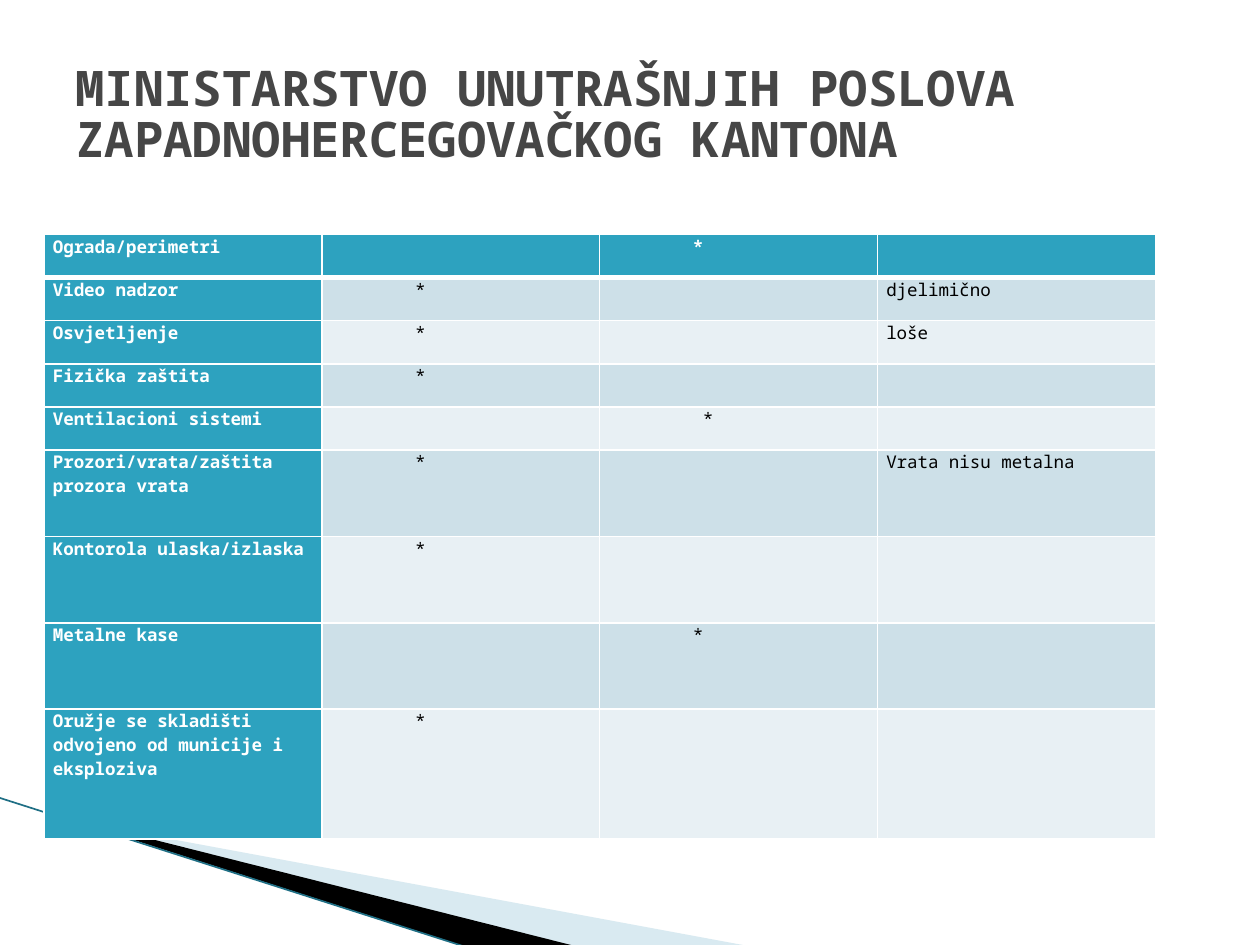
from lxml.etree import SubElement
from pptx import Presentation
from pptx.dml.color import RGBColor
from pptx.enum.text import MSO_ANCHOR, MSO_AUTO_SIZE, PP_ALIGN
from pptx.oxml.ns import qn
from pptx.util import Inches, Pt

FONT = "Noto Sans Mono"
TEAL, WHITE, BLACK = "2DA2BF", "FFFFFF", "000000"
BANDS = ["CDE0E8", "E8F0F4"]
YES, NO, NOTE = 1, 2, 3
ROW_UNITS = [1, 1, 1, 1, 1, 2, 2, 2, 3]
ROWS = [
    ("Ograda/perimetri", {NO: "*"}),
    ("Video nadzor", {YES: "*", NOTE: "djelimično"}),
    ("Osvjetljenje", {YES: "*", NOTE: "loše"}),
    ("Fizička zaštita", {YES: "*"}),
    ("Ventilacioni sistemi", {NO: "*"}),
    ("Prozori/vrata/zaštita prozora vrata", {YES: "*", NOTE: "Vrata nisu metalna"}),
    ("Kontorola ulaska/izlaska", {YES: "*"}),
    ("Metalne kase", {NO: "*"}),
    ("Oružje se skladišti odvojeno od municije i eksploziva", {YES: "*"}),
]
MARK_INDENT = 0.67
INDENTS = {"Ventilacioni sistemi": 0.75}


def rgb(value):
    return RGBColor.from_string(value)


def set_format(obj, values):
    for name, value in values.items():
        setattr(obj, name, value)


def write(p, text, size, color, bold):
    r = p.add_run()
    r.text = text
    set_format(r.font, {"name": FONT, "size": Pt(size), "bold": bold})
    r.font.color.rgb = rgb(color)


def add_wedge(s, left, top, points, color, alpha=None):
    corners = [(Inches(left + x), Inches(top + y)) for x, y in points]
    builder = s.shapes.build_freeform(*corners[0])
    builder.add_line_segments(corners[1:], close=True)
    sp = builder.convert_to_shape()
    sp.shadow.inherit = False
    sp.fill.solid()
    sp.fill.fore_color.rgb = rgb(color)
    sp.line.fill.background()
    if alpha:
        clr = sp.fill._xPr.find(qn("a:solidFill"))[0]
        SubElement(clr, qn("a:alpha")).set("val", str(alpha * 1000))


def add_corner(s, left, top, width, height):
    add_wedge(s, left, top, [(0.56, 0.18), (5.96, 1.18), (4.57, 1.18), (0.56, 0.17)],
              "A0CBDC", 40)
    add_wedge(s, left, top, [(0.54, 0.16), (4.58, 1.18), (3.73, 1.19), (0.55, 0.17)], BLACK)
    line = s.shapes.add_connector(1, Inches(left), Inches(top),
                                  Inches(left + width), Inches(top + height))
    line.line.color.rgb = rgb("1F6F85")
    line.line.width = Pt(0.95)
    SubElement(line._element.spPr, qn("a:effectLst"))


def add_title(s, left, top, width, height, text):
    sp = s.shapes.title
    set_format(sp, {"left": Inches(left), "top": Inches(top),
                    "width": Inches(width), "height": Inches(height)})
    tf = sp.text_frame
    set_format(tf, {"word_wrap": True, "auto_size": MSO_AUTO_SIZE.NONE,
                    "vertical_anchor": MSO_ANCHOR.MIDDLE})
    p = tf.paragraphs[0]
    set_format(p, {"alignment": PP_ALIGN.LEFT, "line_spacing": 0.88})
    write(p, text, 28, "464646", True)


def set_borders(cell, widths):
    tcPr = cell._tc.get_or_add_tcPr()
    for side, width in widths.items():
        ln = SubElement(tcPr, qn("a:ln" + side))
        ln.set("w", str(Pt(width)))
        SubElement(SubElement(ln, qn("a:solidFill")), qn("a:srgbClr")).set("val", WHITE)


def fill_cell(cell, row, col, text, indent):
    set_format(cell, {"margin_left": Inches(0.07), "margin_right": Inches(0.07),
                      "margin_top": 0, "margin_bottom": 0})
    set_borders(cell, {"L": 1, "R": 1, "T": 3 if row == 1 else 1, "B": 3 if row == 0 else 1})
    heading = row == 0 or col == 0
    cell.fill.solid()
    cell.fill.fore_color.rgb = rgb(TEAL if heading else BANDS[(row - 1) % 2])
    if text:
        p = cell.text_frame.paragraphs[0]
        p.alignment = PP_ALIGN.LEFT
        if text == "*":
            p._p.get_or_add_pPr().set("marL", str(Inches(indent)))
        write(p, text, 10, WHITE if heading else BLACK, heading)


def add_checklist(s, left, top, width, height):
    table = s.shapes.add_table(len(ROWS), 4, Inches(left), Inches(top),
                               Inches(width), Inches(height)).table
    for column in table.columns:
        column.width = Inches(width / 4)
    for i, (label, marks) in enumerate(ROWS):
        table.rows[i].height = Inches(height * ROW_UNITS[i] / sum(ROW_UNITS))
        for j in range(4):
            text = label if j == 0 else marks.get(j)
            fill_cell(table.cell(i, j), i, j, text, INDENTS.get(label, MARK_INDENT))


def main():
    prs = Presentation()
    prs.slide_width, prs.slide_height = Inches(10), Inches(7.5)
    s = prs.slides.add_slide(prs.slide_layouts[5])
    add_corner(s, -0.01, 6.33, 3.72, 1.19)
    add_checklist(s, 0.35, 1.86, 8.82, 4.8)
    add_title(s, 0.5, 0.3, 9, 1.25,
              "MINISTARSTVO UNUTRAŠNJIH POSLOVA ZAPADNOHERCEGOVAČKOG KANTONA")
    prs.save("out.pptx")


if __name__ == "__main__":
    main()
